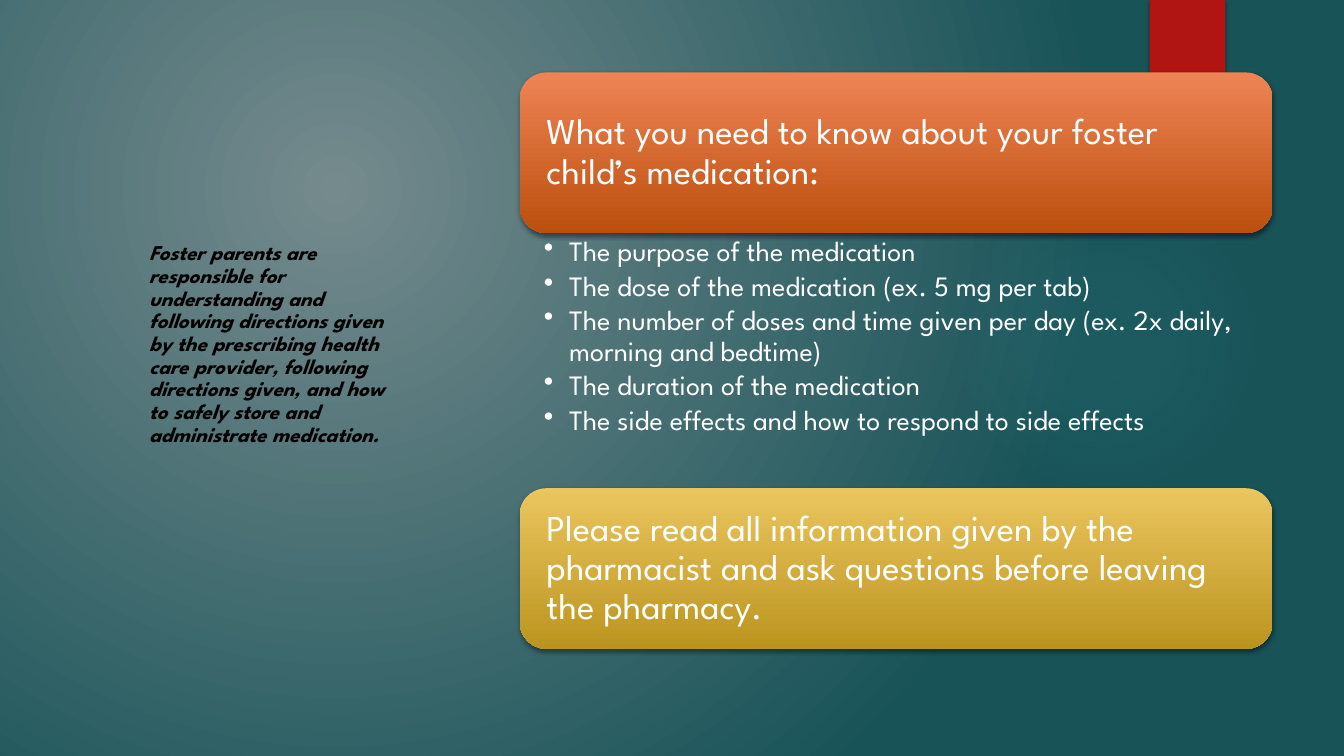
from pptx import Presentation
from pptx import util as u
from pptx.dml.color import RGBColor
from pptx.enum import shapes, text
from pptx.oxml import parse_xml
from pptx.oxml.ns import nsdecls

PX = 9525  # EMU in one px, 96 px to the inch

WHITE = RGBColor(0xFF, 0xFF, 0xFF)
BLACK = RGBColor(0x00, 0x00, 0x00)
RED = RGBColor(0xB0, 0x15, 0x13)
GREY_TEAL = RGBColor(0x75, 0x8A, 0x8D)
DEEP_TEAL = RGBColor(0x18, 0x53, 0x58)
GLOW = RGBColor(0x50, 0xB9, 0xC1)
ORANGE = RGBColor(0xEE, 0x84, 0x55), RGBColor(0xBC, 0x4F, 0x0E)
GOLD = RGBColor(0xEB, 0xC6, 0x5F), RGBColor(0xBB, 0x94, 0x1F)

DOWN = '<a:lin ang="5400000" scaled="0"/>'


def circle(left, top, right, bottom):
    return (f'<a:path path="circle"><a:fillToRect l="{left}000" t="{top}000" '
            f'r="{right}000" b="{bottom}000"/></a:path>')


def write(frame, *lines, size, color=WHITE, bold=False, italic=False,
          bullet=False, after=0, insets=(10, 5, 10, 5),
          anchor=text.MSO_ANCHOR.TOP):
    """Fill a text frame, one paragraph for each line."""
    frame.word_wrap = True
    frame.auto_size = text.MSO_AUTO_SIZE.NONE
    frame.vertical_anchor = anchor
    (frame.margin_left, frame.margin_top,
     frame.margin_right, frame.margin_bottom) = [n * PX for n in insets]
    for index, line in enumerate(lines):
        paragraph = frame.add_paragraph() if index else frame.paragraphs[0]
        paragraph.alignment = text.PP_ALIGN.LEFT
        paragraph.line_spacing = 0.9
        paragraph.space_before = u.Pt(0)
        paragraph.space_after = u.Pt(after)
        if bullet:
            props = paragraph._p.get_or_add_pPr()
            props.set("marL", str(24 * PX))
            props.set("indent", str(-24 * PX))
            props.append(parse_xml(f'<a:buChar {nsdecls("a")} char="•"/>'))
        run = paragraph.add_run()
        run.text = line
        font = run.font
        font.name, font.size, font.color.rgb = SlideBuilder.FONT, u.Pt(size), color
        font.bold, font.italic = bold, italic


class SlideBuilder:
    FONT = "League Spartan"

    def __init__(self, deck):
        self.slide = deck.slides.add_slide(deck.slide_layouts[5])

    def gradient(self, owner, fill, stops, direction):
        """Give owner a gradient of (position, colour, opacity) stops."""
        fill.gradient()
        old = owner.element.xpath(".//a:gradFill")[0]
        marks = "".join(
            f'<a:gs pos="{pos}000"><a:srgbClr val="{color}">'
            f'<a:alpha val="{alpha}000"/></a:srgbClr></a:gs>'
            for pos, color, alpha in stops)
        new = parse_xml(f'<a:gradFill {nsdecls("a")} rotWithShape="1">'
                        f'<a:gsLst>{marks}</a:gsLst>{direction}</a:gradFill>')
        old.getparent().replace(old, new)

    def background(self, *stops, direction):
        self.gradient(self.slide, self.slide.background.fill, stops, direction)

    def title(self, line, box, **style):
        title = self.slide.shapes.title
        title.left, title.top, title.width, title.height = [n * PX for n in box]
        write(title.text_frame, line, **style)

    def shape(self, kind, box, color=None, stops=(), direction=DOWN, shadow=True):
        shape = self.slide.shapes.add_shape(kind, *[n * PX for n in box])
        shape.line.fill.background()
        shape.shadow.inherit = False
        if stops:
            self.gradient(shape, shape.fill, stops, direction)
        else:
            shape.fill.solid()
            shape.fill.fore_color.rgb = color
        if shadow:
            shape.element.xpath(".//a:effectLst")[0].append(parse_xml(
                f'<a:outerShdw {nsdecls("a")} blurRad="{u.Pt(3)}" dist="{u.Pt(2)}" '
                'dir="5400000" rotWithShape="0"><a:srgbClr val="000000">'
                '<a:alpha val="45000"/></a:srgbClr></a:outerShdw>'))
        return shape

    def card(self, line, box, colors):
        stops = [(pos, color, 100) for pos, color in zip((0, 100), colors)]
        card = self.shape(shapes.MSO_SHAPE.ROUNDED_RECTANGLE, box, stops=stops)
        write(card.text_frame, line, size=26, insets=(18, 18, 18, 18),
              anchor=text.MSO_ANCHOR.MIDDLE)

    def bullets(self, lines, box):
        listing = self.slide.shapes.add_textbox(*[n * PX for n in box])
        write(listing.text_frame, *lines, size=20, bullet=True, after=3.2,
              insets=(23, 4, 19, 4))


def main():
    deck = Presentation()
    deck.slide_width, deck.slide_height = 1280 * PX, 720 * PX
    page = SlideBuilder(deck)

    # Backdrop: radial gradient, soft glow and red tab
    page.background((0, GREY_TEAL, 100), (100, DEEP_TEAL, 100),
                    direction=circle(50, 50, 100, 100))
    page.shape(shapes.MSO_SHAPE.OVAL, (903, 176, 296, 296),
               stops=[(0, GLOW, 7), (36, GLOW, 6), (69, GLOW, 0)],
               direction=circle(50, 50, 50, 50), shadow=False)
    page.shape(shapes.MSO_SHAPE.RECTANGLE, (1095, 0, 72, 120), RED)

    # Responsibility statement
    page.title("Foster parents are responsible for understanding and following "
               "directions given by the prescribing health care provider, "
               "following directions given, and how to safely store and "
               "administrate medication.",
               (132, 226, 257, 247), size=15, color=BLACK, bold=True, italic=True)

    # Medication column: heading card, checklist, closing card
    left, width, card_height = 495, 717, 153
    heading_top, list_height = 69, 243
    list_top = heading_top + card_height
    page.card("What you need to know about your foster child’s medication:",
              (left, heading_top, width, card_height), ORANGE)
    page.bullets([
        "The purpose of the medication",
        "The dose of the medication (ex. 5 mg per tab)",
        "The number of doses and time given per day (ex. 2x daily, morning and bedtime)",
        "The duration of the medication",
        "The side effects and how to respond to side effects",
    ], (left, list_top, width, list_height))
    page.card("Please read all information given by the pharmacist and ask "
              "questions before leaving the pharmacy.",
              (left, list_top + list_height, width, card_height), GOLD)

    deck.save("out.pptx")


if __name__ == "__main__":
    main()
